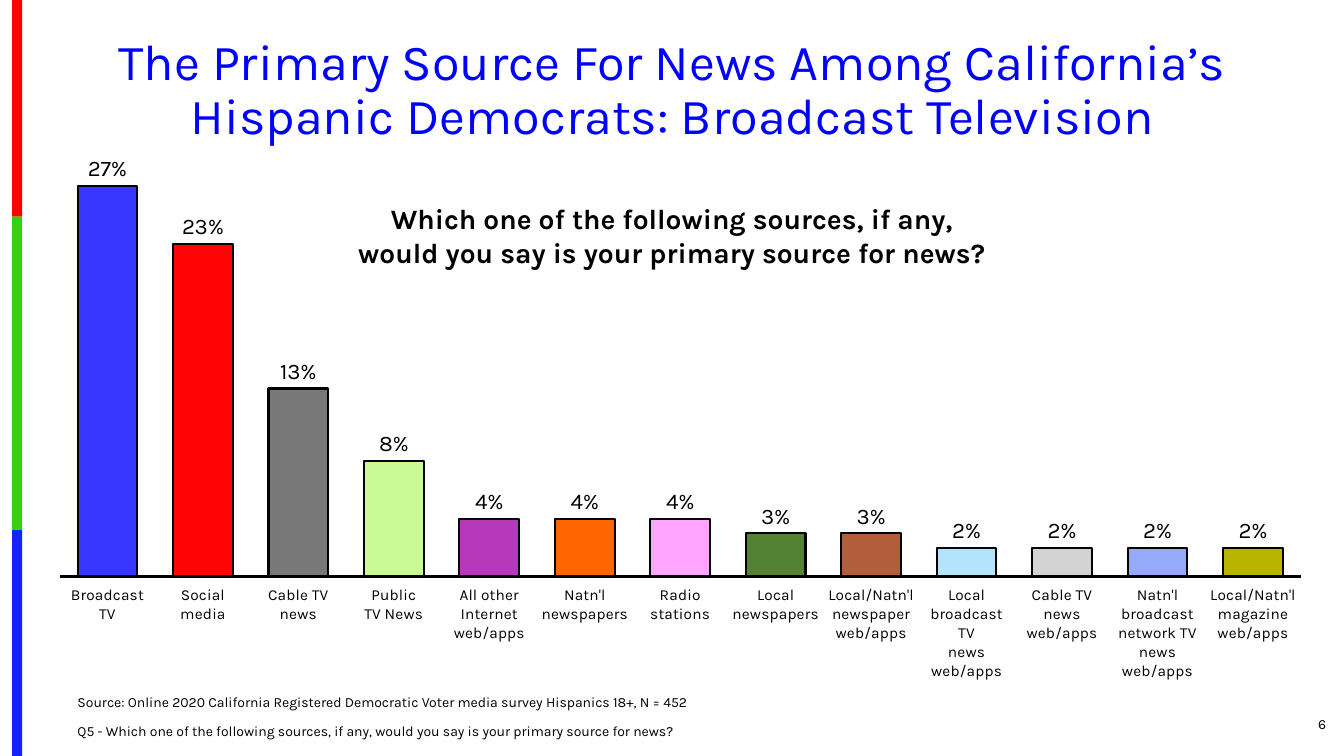
from lxml import etree
from pptx import Presentation
from pptx.chart.data import CategoryChartData
from pptx.dml.color import RGBColor
from pptx.enum.chart import XL_CHART_TYPE as Kind, XL_LABEL_POSITION as Spot
from pptx.enum.chart import XL_TICK_LABEL_POSITION as Tick_Pos, XL_TICK_MARK as Tick
from pptx.enum.shapes import MSO_SHAPE as Shape
from pptx.enum.text import MSO_ANCHOR as Anchor, PP_ALIGN as Align
from pptx.oxml.ns import qn
from pptx.util import Inches, Pt

FONT = "Karla"
COLORS = {"title": "0000FF", "text": "000000", "bar": "CCCCCC"}
TITLE = ["The Primary Source For News Among California’s "
         "Hispanic Democrats: Broadcast Television"]
QUESTION = ["Which one of the following sources, if any,",
            "would you say is your primary source for news?"]
NOTES = ["Source: Online 2020 California Registered Democratic Voter media "
         "survey Hispanics 18+, N = 452",
         "Q5 - Which one of the following sources, if any, would you say is "
         "your primary source for news?"]
PAGE = ["6"]
STRIPES = [("FE0000", 2.15), ("36CF12", 3.11), ("1322FE", 2.24)]
SOURCES = [
    ("Broadcast\nTV", 0.27, "3636FF"),
    ("Social\nmedia", 0.23, "FF0505"),
    ("Cable TV\nnews", 0.13, "787878"),
    ("Public\nTV News", 0.08, "CAFA96"),
    ("All other Internet web/apps", 0.04, "B539B8"),
    ("Natn'l newspapers", 0.04, "FF6600"),
    ("Radio\nstations", 0.04, "FFA4FF"),
    ("Local newspapers", 0.03, "548235"),
    ("Local/Natn'l newspaper web/apps", 0.03, "B25E3C"),
    ("Local\nbroadcast TV\nnews\nweb/apps", 0.02, "B2E5FC"),
    ("Cable TV\nnews\nweb/apps", 0.02, "D3D3D3"),
    ("Natn'l broadcast network TV news web/apps", 0.02, "95A9FD"),
    ("Local/Natn'l magazine web/apps", 0.02, "B8B400"),
]
PLOT = {"x": 0.001, "y": 0.17, "w": 0.991, "h": 0.674}


def paint(fill, color):
    fill.solid()
    fill.fore_color.rgb = RGBColor.from_string(color)


def style(font, size, color=COLORS["text"], bold=False):
    font.name, font.size, font.bold = FONT, Pt(size), bold
    font.color.rgb = RGBColor.from_string(color)


def edge(line):
    paint(line.fill, COLORS["text"])
    line.width = Pt(1.5)


def add_text(slide, lines, box, size, color=COLORS["text"], bold=False,
             align=Align.LEFT, anchor=Anchor.TOP, space=1.0, gap=0):
    frame = slide.shapes.add_textbox(*map(Inches, box)).text_frame
    frame.word_wrap = True
    frame.vertical_anchor = anchor
    for i, line in enumerate(lines):
        para = frame.add_paragraph() if i else frame.paragraphs[0]
        para.alignment, para.line_spacing = align, space
        if i:
            para.space_before = Pt(gap)
        run = para.add_run()
        run.text = line
        style(run.font, size, color, bold)


def add_stripes(slide):
    top = 0
    for color, height in STRIPES:
        stripe = slide.shapes.add_shape(
            Shape.RECTANGLE, *map(Inches, (0.12, top, 0.1, height)))
        stripe.shadow.inherit = False
        paint(stripe.fill, color)
        stripe.line.fill.background()
        top += height


def set_plot(chart):
    """Fix the inner plot area at the fractions in PLOT."""
    area = chart._chartSpace.chart.plotArea
    for old in area.findall(qn("c:layout")):
        area.remove(old)
    layout = etree.Element(qn("c:layout"))
    area.insert(0, layout)
    manual = etree.SubElement(layout, qn("c:manualLayout"))
    parts = [("layoutTarget", "inner"), ("xMode", "edge"), ("yMode", "edge")]
    for tag, val in parts + list(PLOT.items()):
        etree.SubElement(manual, qn("c:" + tag)).set("val", str(val))


def add_bars(slide):
    names, vals, fills = zip(*SOURCES)
    data = CategoryChartData(number_format="0%")
    data.categories = names
    data.add_series("Series 1", vals)
    chart = slide.shapes.add_chart(
        Kind.COLUMN_CLUSTERED, *map(Inches, (0.58, 0.33, 12.42, 6.42)),
        data).chart
    chart.has_legend = chart.has_title = False
    style(chart.font, 10)
    set_plot(chart)

    axis = chart.value_axis
    axis.minimum_scale, axis.maximum_scale = 0, 0.3
    axis.has_major_gridlines = axis.visible = False
    axis = chart.category_axis
    axis.major_tick_mark = axis.minor_tick_mark = Tick.NONE
    axis.tick_label_position = Tick_Pos.LOW
    style(axis.tick_labels.font, 11)
    edge(axis.format.line)

    plot = chart.plots[0]
    plot.gap_width, plot.vary_by_categories = 60, False
    bars = plot.series[0]
    paint(bars.format.fill, COLORS["bar"])
    edge(bars.format.line)
    for i, color in enumerate(fills):
        form = bars.points[i].format
        paint(form.fill, color)
        edge(form.line)
    labels = bars.data_labels
    labels.show_value = True
    labels.number_format, labels.number_format_is_linked = "0%", False
    labels.position = Spot.OUTSIDE_END
    style(labels.font, 16)


def main():
    deck = Presentation()
    deck.slide_width, deck.slide_height = Inches(13.33), Inches(7.5)
    slide = deck.slides.add_slide(deck.slide_layouts[6])
    add_stripes(slide)
    add_bars(slide)
    add_text(slide, TITLE, (0.46, 0.31, 12.42, 1.19), 36, COLORS["title"],
             align=Align.CENTER, anchor=Anchor.MIDDLE, space=0.9)
    add_text(slide, PAGE, (12.17, 6.98, 1.08, 0.4), 10,
             align=Align.RIGHT, anchor=Anchor.MIDDLE)
    add_text(slide, NOTES, (0.67, 6.85, 9.42, 0.54), 10,
             anchor=Anchor.BOTTOM, space=0.9, gap=10)
    add_text(slide, QUESTION, (3.08, 1.95, 7.17, 0.77), 20, bold=True,
             align=Align.CENTER)
    deck.save("out.pptx")


if __name__ == "__main__":
    main()
